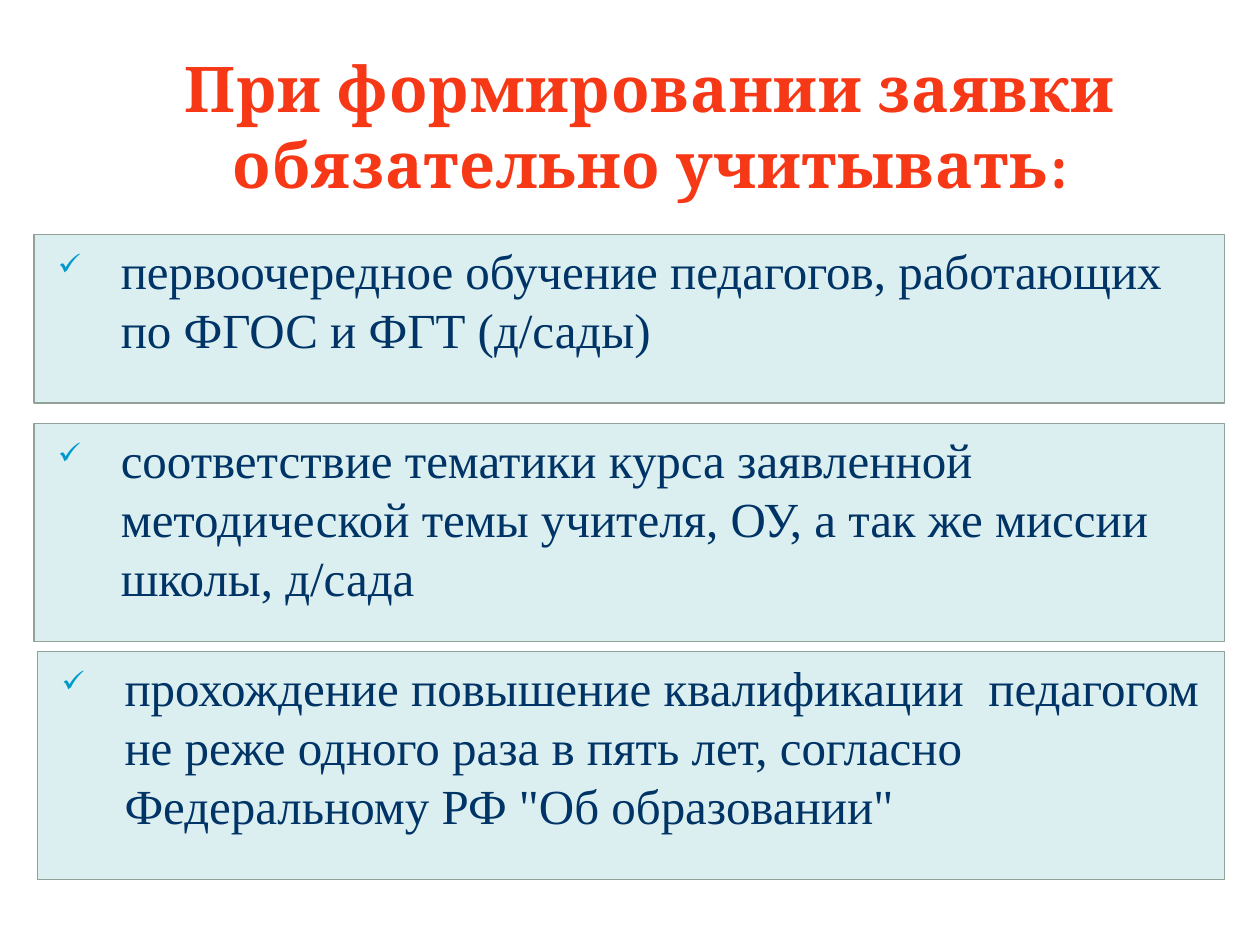
from lxml.etree import SubElement
from pptx import Presentation
from pptx.dml.color import RGBColor
from pptx.enum.shapes import MSO_SHAPE
from pptx.enum.text import MSO_ANCHOR, MSO_AUTO_SIZE, PP_ALIGN
from pptx.oxml.ns import qn
from pptx.util import Inches, Pt


def color(value):
    """Return the colour for a hex string."""
    return RGBColor.from_string(value)


class RequirementsSlide:
    """Hold the style and the current slide."""

    title_font, body_font = "Cambria", "Times New Roman"
    title_color, text_color, bullet_color = "F73817", "003366", "0099CC"
    fill_color, line_color = "DCEFF0", "93A299"

    def __init__(self, presentation):
        """Add a title-only slide."""
        self.slide = presentation.slides.add_slide(presentation.slide_layouts[5])

    def format_run(self, run, font_name, size, hex_color, bold=False):
        """Set the font of a run."""
        run.font.name = font_name
        run.font.size = Pt(size)
        run.font.bold = bold
        run.font.color.rgb = color(hex_color)

    def add_title(self, text, left, top, width, height):
        """Place and format the title."""
        title = self.slide.shapes.title
        title.left, title.top = Inches(left), Inches(top)
        title.width, title.height = Inches(width), Inches(height)
        frame = title.text_frame
        frame.text = text
        frame.word_wrap = True
        frame.auto_size = MSO_AUTO_SIZE.NONE
        frame.vertical_anchor = MSO_ANCHOR.MIDDLE
        paragraph = frame.paragraphs[0]
        paragraph.alignment = PP_ALIGN.CENTER
        run = paragraph.runs[0]
        self.format_run(run, self.title_font, 36, self.title_color, True)
        run.font._element.set("spc", "50")

    def add_check_bullet(self, paragraph):
        """Give a paragraph a hanging check mark."""
        properties = paragraph._p.get_or_add_pPr()
        properties.set("marL", str(Inches(0.59)))
        properties.set("indent", str(Inches(-0.5)))
        bullet_color = SubElement(properties, qn("a:buClr"))
        SubElement(bullet_color, qn("a:srgbClr"), val=self.bullet_color)
        SubElement(properties, qn("a:buSzPct"), val="60000")
        SubElement(properties, qn("a:buChar"), char="✓")

    def add_requirement(self, text, left, top, width, height):
        """Add a tinted box with one checked requirement."""
        shape = self.slide.shapes.add_shape(
            MSO_SHAPE.RECTANGLE, Inches(left), Inches(top), Inches(width), Inches(height)
        )
        shape.shadow.inherit = False
        shape.fill.solid()
        shape.fill.fore_color.rgb = color(self.fill_color)
        shape.line.color.rgb = color(self.line_color)
        shape.line.width = Pt(0.75)
        frame = shape.text_frame
        frame.text = text
        frame.word_wrap = True
        frame.vertical_anchor = MSO_ANCHOR.TOP
        paragraph = frame.paragraphs[0]
        paragraph.alignment = PP_ALIGN.LEFT
        self.add_check_bullet(paragraph)
        self.format_run(paragraph.runs[0], self.body_font, 28, self.text_color)


def main():
    """Build and save the slide."""
    presentation = Presentation()
    presentation.slide_width, presentation.slide_height = Inches(10), Inches(7.5)
    slide = RequirementsSlide(presentation)
    slide.add_title("При формировании заявки обязательно учитывать:", 0.91, 0.52, 8.5, 0.95)
    requirements = [
        ("первоочередное обучение педагогов, работающих по ФГОС и ФГТ (д/сады)",
         0.27, 1.86, 1.34),
        ("соответствие тематики курса заявленной методической темы учителя, ОУ, "
         "а так же миссии школы, д/сада", 0.27, 3.36, 1.73),
        ("прохождение повышение квалификации  педагогом не реже одного раза в пять лет, "
         "согласно Федеральному РФ \"Об образовании\"", 0.3, 5.17, 1.81),
    ]
    right_edge = 9.72
    for text, left, top, height in requirements:
        slide.add_requirement(text, left, top, right_edge - left, height)
    presentation.save("out.pptx")


if __name__ == "__main__":
    main()
